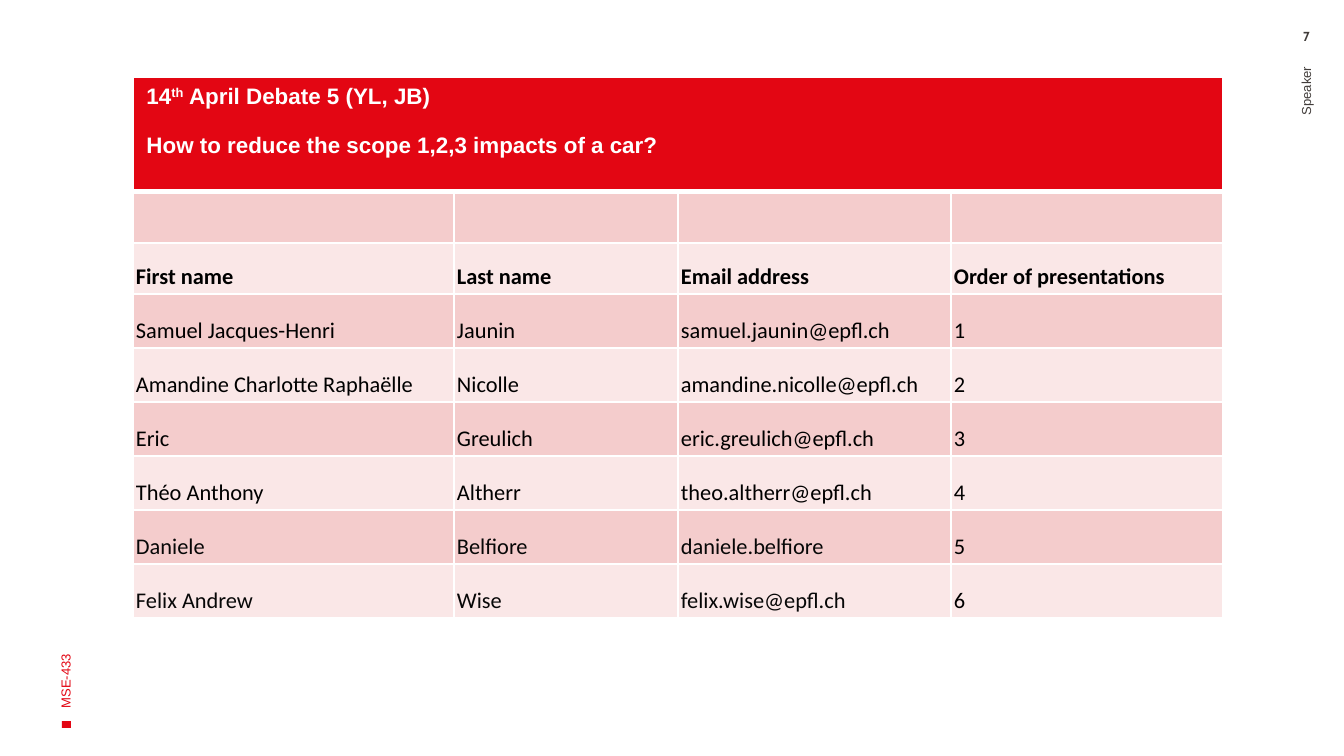
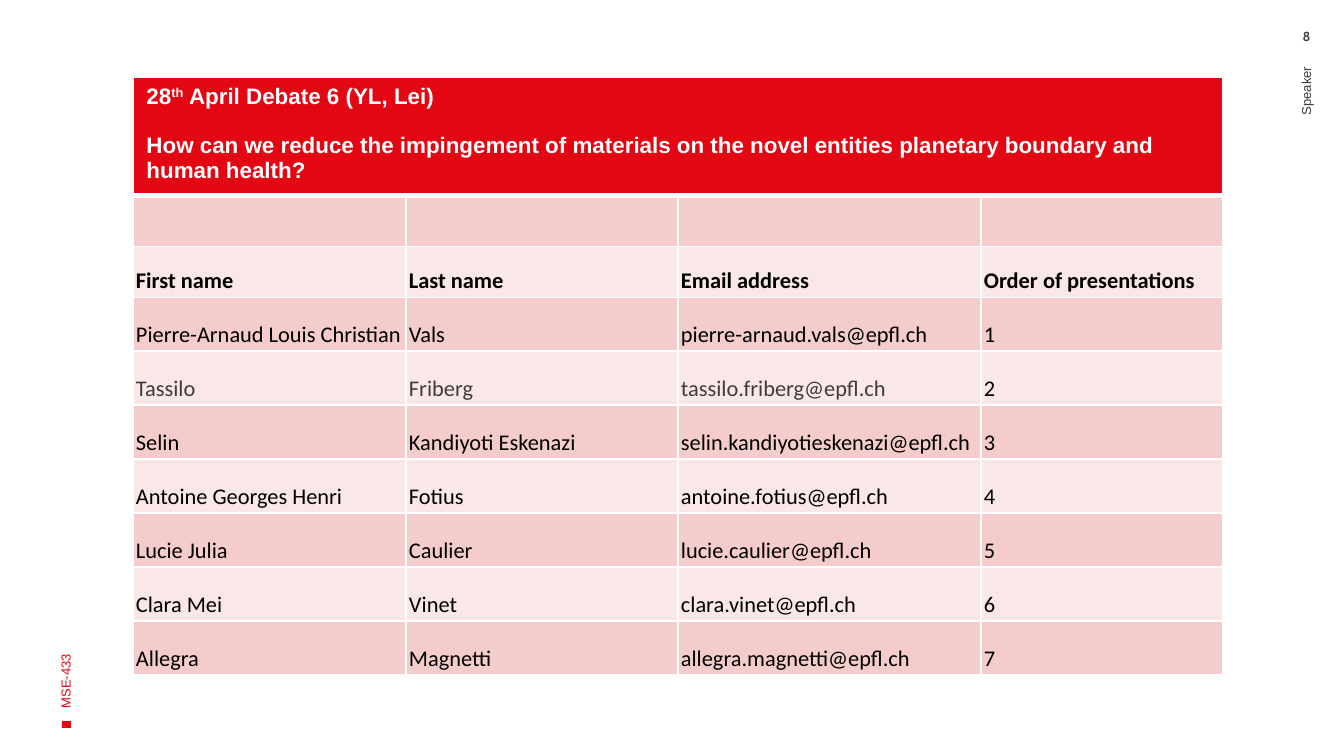
from lxml.etree import SubElement
from pptx import Presentation
from pptx.dml.color import RGBColor as RGB
from pptx.enum.shapes import MSO_SHAPE as SHAPE
from pptx.enum.text import MSO_ANCHOR as ANCHOR, PP_ALIGN as ALIGN
from pptx.oxml.ns import qn
from pptx.util import Emu, Pt

SLIDE_W, SLIDE_H = 1344, 756
COLORS = {
    "red": "E30613",
    "pink": "F4CCCC",
    "blush": "FAE7E7",
    "white": "FFFFFF",
    "black": "000000",
    "soft": "070707",
    "gray": "413C3A",
}
HEADINGS = ["First name", "Last name", "Email address", "Order of presentations"]
TITLE_H, HEADING_H, SPEAKER_H = 115, 51, 54

DEBATES = [
    {
        "page": "7",
        "date": ("14", "th", " April Debate 5 (YL, JB)"),
        "question": "How to reduce the scope 1,2,3 impacts of a car?",
        "widths": [321, 224, 273, 272],
        "speakers": [
            ("Samuel Jacques-Henri", "Jaunin", "samuel.jaunin@epfl.ch"),
            ("Amandine Charlotte Raphaëlle", "Nicolle", "amandine.nicolle@epfl.ch"),
            ("Eric", "Greulich", "eric.greulich@epfl.ch"),
            ("Théo Anthony", "Altherr", "theo.altherr@epfl.ch"),
            ("Daniele", "Belfiore", "daniele.belfiore"),
            ("Felix Andrew", "Wise", "felix.wise@epfl.ch"),
        ],
        "inks": {5: "soft", 6: "soft"},
    },
    {
        "page": "8",
        "date": ("28", "th", " April Debate 6 (YL, Lei)"),
        "question": "How can we reduce the impingement of materials on the novel "
                    "entities planetary boundary and human health?",
        "widths": [273, 272, 303, 242],
        "speakers": [
            ("Pierre-Arnaud Louis Christian", "Vals", "pierre-arnaud.vals@epfl.ch"),
            ("Tassilo", "Friberg", "tassilo.friberg@epfl.ch"),
            ("Selin", "Kandiyoti Eskenazi", "selin.kandiyotieskenazi@epfl.ch"),
            ("Antoine Georges Henri", "Fotius", "antoine.fotius@epfl.ch"),
            ("Lucie Julia", "Caulier", "lucie.caulier@epfl.ch"),
            ("Clara Mei", "Vinet", "clara.vinet@epfl.ch"),
            ("Allegra", "Magnetti", "allegra.magnetti@epfl.ch"),
        ],
        "inks": {2: "gray"},
    },
]


def px(n):
    return Emu(round(n * 914400 / 134.4))


def rgb(name):
    return RGB.from_string(COLORS[name])


def set_font(p, name, size, color, bold=False):
    p.font.name = name
    p.font.size = Pt(size)
    p.font.bold = bold
    p.font.color.rgb = rgb(color)


def add_label(s, box, text, color, align=ALIGN.LEFT, font="Arial", bold=False,
              rotation=270, anchor=ANCHOR.MIDDLE, pad=7):
    sp = s.shapes.add_textbox(*map(px, box))
    sp.rotation = rotation
    tf = sp.text_frame
    tf.word_wrap = True
    tf.vertical_anchor = anchor
    tf.margin_top = tf.margin_bottom = px(pad)
    p = tf.paragraphs[0]
    p.text = text
    p.alignment = align
    set_font(p, font, 7, color, bold)


def add_margins(s, page):
    sp = s.shapes.add_shape(SHAPE.RECTANGLE, *map(px, (63, 720, 7, 9)))
    sp.rotation = 270
    sp.shadow.inherit = False
    sp.fill.solid()
    sp.fill.fore_color.rgb = rgb("red")
    sp.line.fill.background()
    add_label(s, (-180, 409, 491, 134), "MSE-433", "red")
    add_label(s, (1046, 276, 520, 75), "Speaker", "gray", ALIGN.RIGHT)
    add_label(s, (1269, 28, 75, 24), page, "gray", ALIGN.CENTER, "Cabin", True,
              rotation=0, anchor=ANCHOR.TOP, pad=0)


def style_cell(cell, fill, top=1, bottom=1):
    tcPr = cell._tc.get_or_add_tcPr()
    for side, width in zip("LRTB", (1, 1, top, bottom)):
        ln = SubElement(tcPr, qn(f"a:ln{side}"), w=str(Pt(width)))
        paint = SubElement(ln, qn("a:solidFill"))
        SubElement(paint, qn("a:srgbClr"), val=COLORS["white"])
    cell.fill.solid()
    cell.fill.fore_color.rgb = rgb(fill)


def fill_title(table, date, question):
    cells = list(table.rows[0].cells)
    for cell in cells:
        style_cell(cell, "red", bottom=3)
    cells[0].merge(cells[-1])
    tf = cells[0].text_frame
    p = tf.paragraphs[0]
    for text in date:
        r = p.add_run()
        r.text = text
        if text == "th":
            r._r.get_or_add_rPr().set("baseline", "30000")
    set_font(p, "Arial", 12, "white", True)
    p = tf.add_paragraph()
    p.text = question
    p.space_before = Pt(13)
    set_font(p, "Arial", 12, "white", True)


def fill_row(table, row, values, ink="black", bold=False):
    for col, value in enumerate(values):
        cell = table.cell(row, col)
        style_cell(cell, "pink" if row % 2 else "blush", top=3 if row == 1 else 1)
        cell.margin_left = cell.margin_right = cell.margin_bottom = px(3)
        cell.margin_top = 0
        cell.vertical_anchor = ANCHOR.BOTTOM
        p = cell.text_frame.paragraphs[0]
        if value:
            p.text = value
        set_font(p, "Calibri", 12, "black" if col == 3 else ink, bold)


def add_schedule(s, x, y, debate):
    speakers, widths = debate["speakers"], debate["widths"]
    heights = [TITLE_H, HEADING_H, HEADING_H] + [SPEAKER_H] * len(speakers)
    box = (x, y, sum(widths), sum(heights))
    table = s.shapes.add_table(len(heights), len(widths), *map(px, box)).table
    table.horz_banding = False
    for column, width in zip(table.columns, widths):
        column.width = px(width)
    for row, height in zip(table.rows, heights):
        row.height = px(height)
    fill_title(table, debate["date"], debate["question"])
    fill_row(table, 1, [""] * len(widths))
    fill_row(table, 2, HEADINGS, bold=True)
    for order, speaker in enumerate(speakers, 1):
        ink = debate["inks"].get(order, "black")
        fill_row(table, order + 2, [*speaker, str(order)], ink)


def add_debate_slide(prs, debate):
    s = prs.slides.add_slide(prs.slide_layouts[6])
    add_margins(s, debate["page"])
    add_schedule(s, 133, 77, debate)


def main():
    prs = Presentation()
    prs.slide_width, prs.slide_height = px(SLIDE_W), px(SLIDE_H)
    for debate in DEBATES:
        add_debate_slide(prs, debate)
    prs.save("out.pptx")


if __name__ == "__main__":
    main()
